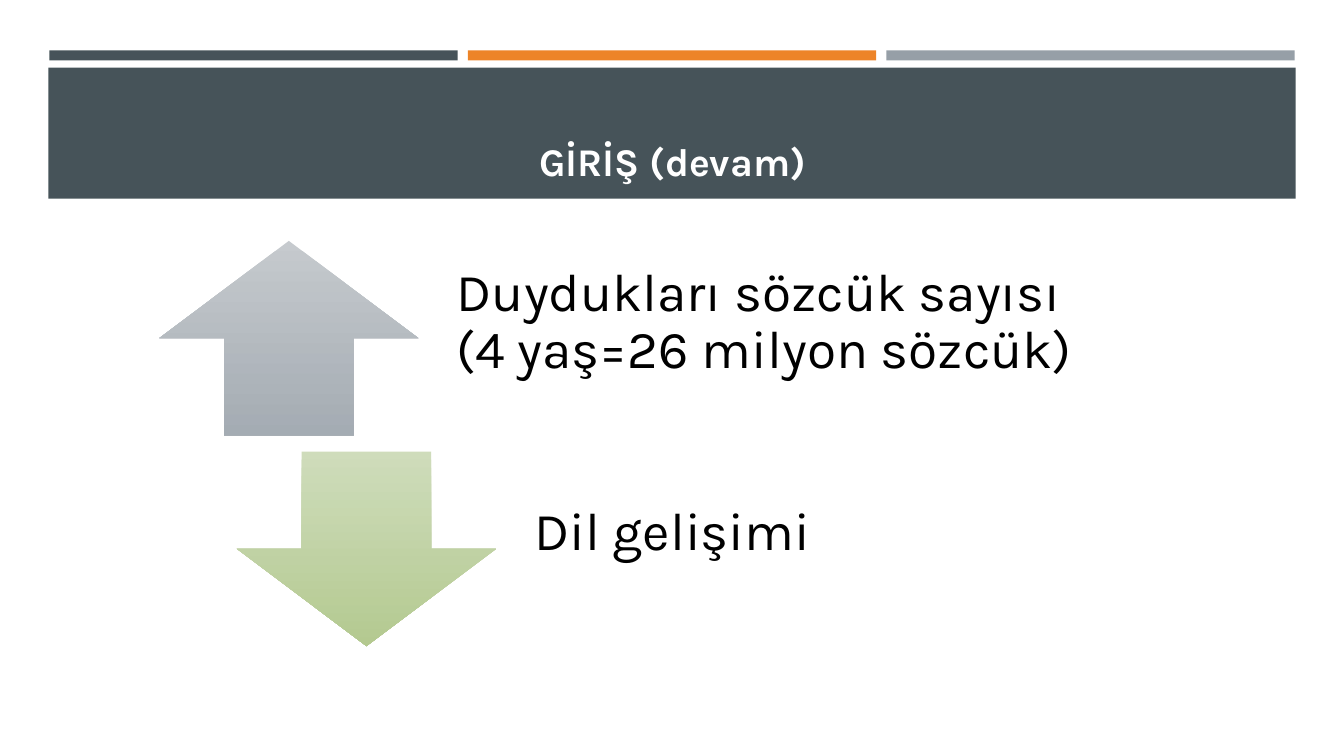
from lxml.etree import SubElement
from pptx import Presentation
from pptx.dml.color import RGBColor
from pptx.enum.shapes import MSO_SHAPE as Shape
from pptx.enum.text import MSO_ANCHOR as Anchor, PP_ALIGN as Align
from pptx.oxml.ns import qn

PX = 9144
SLATE = RGBColor(0x46, 0x53, 0x59)
ORANGE = RGBColor(0xED, 0x84, 0x28)
GREY = RGBColor(0x96, 0x9F, 0xA7)
WHITE = RGBColor(0xFF, 0xFF, 0xFF)
BLACK = RGBColor(0, 0, 0)
SILVER = (RGBColor(0xC0, 0xC5, 0xC9), RGBColor(0x9B, 0xA3, 0xAB))
GREEN = (RGBColor(0xCA, 0xD9, 0xB4), RGBColor(0xAC, 0xC4, 0x85))


class Page:
    """Holds the style and the current slide, with lengths in hundredths of an inch."""

    font = "Karla"

    def __init__(self, deck):
        self.slide = deck.slides.add_slide(deck.slide_layouts[6])

    def shape(self, kind, *box):
        item = self.slide.shapes.add_shape(kind, *(n * PX for n in box))
        item.shadow.inherit = False
        item.line.fill.background()
        return item

    def bar(self, color, *box):
        fill = self.shape(Shape.RECTANGLE, *box).fill
        fill.solid()
        fill.fore_color.rgb = color

    def arrow(self, kind, colors, *box):
        item = self.shape(kind, *box)
        item.fill.gradient()
        item.fill.gradient_angle = 270
        for stop, color in zip(item.fill.gradient_stops, colors):
            stop.color.rgb = color
        for node in item._element.spPr.iter(qn("a:srgbClr")):
            SubElement(node, qn("a:alpha"), val="90000")

    def text(self, words, size, color, *box, bold=False, align=Align.LEFT,
             anchor=Anchor.MIDDLE, pad=(30, 0, 30, 30), space=0.9):
        frame = self.slide.shapes.add_textbox(*(n * PX for n in box)).text_frame
        frame.word_wrap = True
        frame.vertical_anchor = anchor
        (frame.margin_left, frame.margin_top,
         frame.margin_right, frame.margin_bottom) = (n * PX for n in pad)
        frame.text = words
        line = frame.paragraphs[0]
        line.alignment = align
        line.line_spacing = space
        font = line.runs[0].font
        font.name = self.font
        font.size = size * 12700
        font.bold = bold
        font.color.rgb = color


def main():
    deck = Presentation()
    deck.slide_width, deck.slide_height = 1333 * PX, 750 * PX
    page = Page(deck)

    for i, color in enumerate((SLATE, ORANGE, GREY)):
        page.bar(color, 49 + 415 * i, 50, 405, 10)
    page.bar(SLATE, 48, 67, 1237, 130)
    page.text("GİRİŞ (devam)", 28, WHITE, 64, 77, 1206, 111, bold=True,
              align=Align.CENTER, anchor=Anchor.BOTTOM, pad=(10, 5, 10, 5), space=1.0)

    rows = (
        (Shape.UP_ARROW, SILVER, "Duydukları sözcük sayısı (4 yaş=26 milyon sözcük)"),
        (Shape.DOWN_ARROW, GREEN, "Dil gelişimi"),
    )
    for i, (kind, colors, words) in enumerate(rows):
        left, top = 158 + 77 * i, 239 + 209 * i
        page.arrow(kind, colors, left, top, 257, 193)
        page.text(words, 38, BLACK, left + 265, top, 675, 193)

    deck.save("out.pptx")


if __name__ == "__main__":
    main()
